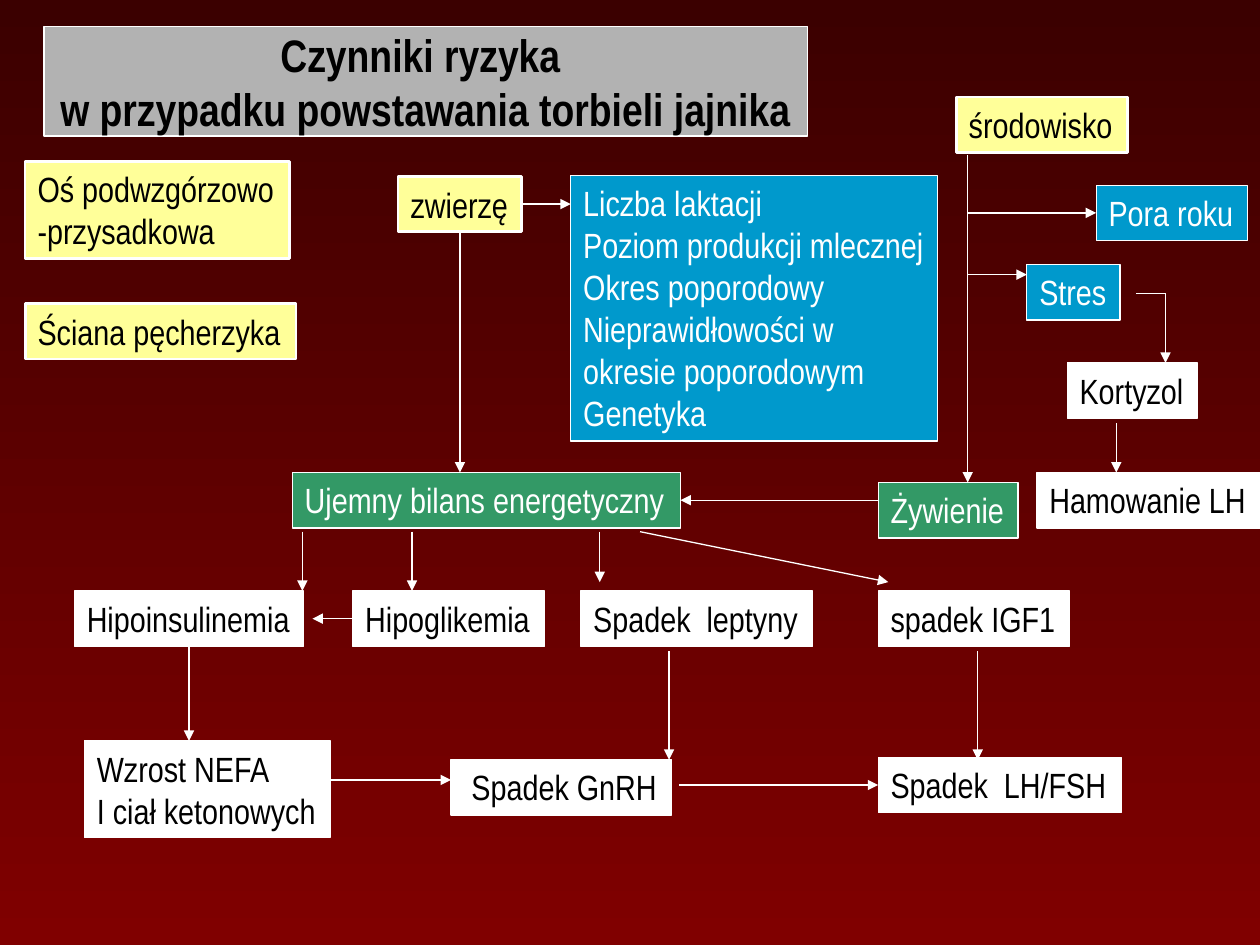
from lxml import etree
from pptx import Presentation
from pptx.dml.color import RGBColor
from pptx.enum import shapes, text
from pptx.oxml import ns
from pptx.util import Inches, Pt


class Theme:
    font = "Arial Narrow"
    head, body = 26, 20
    thin, thick = 0.75, 1.5
    top, base = "3B0000", "800000"
    white, black, grey = "FFFFFF", "000000", "B2B2B2"
    cream, blue, green = "FFFF99", "0099CC", "339966"


deck = Presentation()
deck.slide_width, deck.slide_height = Inches(10), Inches(7.5)
slide = deck.slides.add_slide(deck.slide_layouts[6])

back = slide.background.fill
back.gradient()
back.gradient_angle = 270
for stop, tone in zip(back.gradient_stops, (Theme.top, Theme.base)):
    stop.color.rgb = RGBColor.from_string(tone)


def add_box(words, *, at, fill=Theme.white, ink=Theme.black, line=Theme.thin,
            size=Theme.body, bold=False, align="LEFT", anchor="TOP", grow=True):
    box = slide.shapes.add_shape(shapes.MSO_SHAPE.RECTANGLE, *map(Inches, at))
    box.shadow.inherit = False
    box.fill.solid()
    box.fill.fore_color.rgb = RGBColor.from_string(fill)
    box.line.color.rgb = RGBColor.from_string(Theme.white)
    box.line.width = Pt(line)
    frame = box.text_frame
    frame.text = words
    frame.word_wrap = False
    frame.vertical_anchor = text.MSO_ANCHOR[anchor]
    fit = text.MSO_AUTO_SIZE
    frame.auto_size = fit.SHAPE_TO_FIT_TEXT if grow else fit.NONE
    for para in frame.paragraphs:
        para.alignment = text.PP_ALIGN[align]
        para.font.name = Theme.font
        para.font.size = Pt(size)
        para.font.bold = bold
        para.font.color.rgb = RGBColor.from_string(ink)
    return box


add_box("Czynniki ryzyka \nw przypadku powstawania torbieli jajnika",
        at=(0.35, 0.21, 6.06, 0.87), fill=Theme.grey, size=Theme.head,
        bold=True, align="CENTER", anchor="MIDDLE", grow=False)

one, two, six = 0.44, 0.77, 2.11
row, mid = 4.69, 3.75
cream = dict(fill=Theme.cream, line=Theme.thick, anchor="MIDDLE")
blue = dict(fill=Theme.blue, ink=Theme.white)
green = dict(fill=Theme.green, ink=Theme.white)
facts = "\n".join(["Liczba laktacji", "Poziom produkcji mlecznej",
                   "Okres poporodowy", "Nieprawidłowości w",
                   "okresie poporodowym", "Genetyka"])
boxes = {
    "axis": ("Oś podwzgórzowo\n-przysadkowa", (0.2, 1.28, 2.1, two), cream),
    "wall": ("Ściana pęcherzyka", (0.2, 2.41, 2.15, one), cream),
    "cow": ("zwierzę", (3.16, 1.4, 0.98, one), cream),
    "place": ("środowisko", (7.59, 0.77, 1.36, one), cream),
    "facts": (facts, (4.53, 1.39, 2.91, six), blue),
    "season": ("Pora roku", (8.7, 1.47, 1.2, one), blue),
    "stress": ("Stres", (8.15, 2.1, 0.74, one), blue),
    "energy": ("Ujemny bilans energetyczny", (2.32, mid, 3.08, one), green),
    "food": ("Żywienie", (6.97, 3.83, 1.11, one), green),
    "cortisol": ("Kortyzol", (8.47, 2.88, 1.03, one), {}),
    "block": ("Hamowanie LH", (8.23, mid, 1.77, one), {}),
    "insulin": ("Hipoinsulinemia", (0.59, row, 1.82, one), {}),
    "sugar": ("Hipoglikemia", (2.8, row, 1.52, one), {}),
    "leptin": ("Spadek  leptyny", (4.61, row, 1.84, one), {}),
    "growth": ("spadek IGF1", (6.97, row, 1.52, one), {}),
    "ketone": ("Wzrost NEFA\nI ciał ketonowych", (0.67, 5.88, 1.95, two), {}),
    "gnrh": (" Spadek GnRH", (3.58, 6.03, 1.75, one), {}),
    "lh": ("Spadek  LH/FSH", (6.97, 6.01, 1.93, one), {}),
}
made = {key: add_box(words, at=at, **look)
        for key, (words, at, look) in boxes.items()}


def add_line(start, end, head=True, first=None, last=None):
    link = slide.shapes.add_connector(
        shapes.MSO_CONNECTOR.STRAIGHT, *map(Inches, start + end))
    link.line.color.rgb = RGBColor.from_string(Theme.white)
    link.line.width = Pt(Theme.thin)
    if head:
        tip = etree.SubElement(link.line._get_or_add_ln(), ns.qn("a:tailEnd"))
        tip.set("type", "triangle")
    etree.SubElement(link._element.spPr, ns.qn("a:effectLst"))
    if first:
        link.begin_connect(made[first[0]], first[1])
    if last:
        link.end_connect(made[last[0]], last[1])


add_line((3.65, 1.84), (3.65, mid), first=("cow", 2))
add_line((4.14, 1.62), (4.53, 1.62), first=("cow", 3))
add_line((6.97, 3.97), (5.4, 3.97), last=("energy", 3))
add_line((7.68, 1.69), (8.7, 1.69), last=("season", 1))
add_line((2.8, 4.91), (2.48, 4.91), first=("sugar", 1))
add_line((1.5, 5.13), (1.5, 5.88), first=("insulin", 2))
add_line((5.39, 6.23), (6.97, 6.23), last=("lh", 1))
add_line((9.02, 2.33), (9.25, 2.33), head=False)

for x, y, low in [(7.68, 1.23, 3.83), (9.25, 2.33, 2.88), (8.86, 3.36, mid),
                  (2.4, 4.22, row), (3.27, 4.22, row), (4.76, 4.22, 4.62),
                  (5.31, 5.17, 6.03), (7.76, 5.17, 6.03)]:
    add_line((x, y), (x, low))
add_line((7.68, 2.18), (8.15, 2.18))
add_line((2.62, 6.19), (3.58, 6.19))
add_line((5.08, 4.22), (7.05, 4.62))

deck.save("out.pptx")
